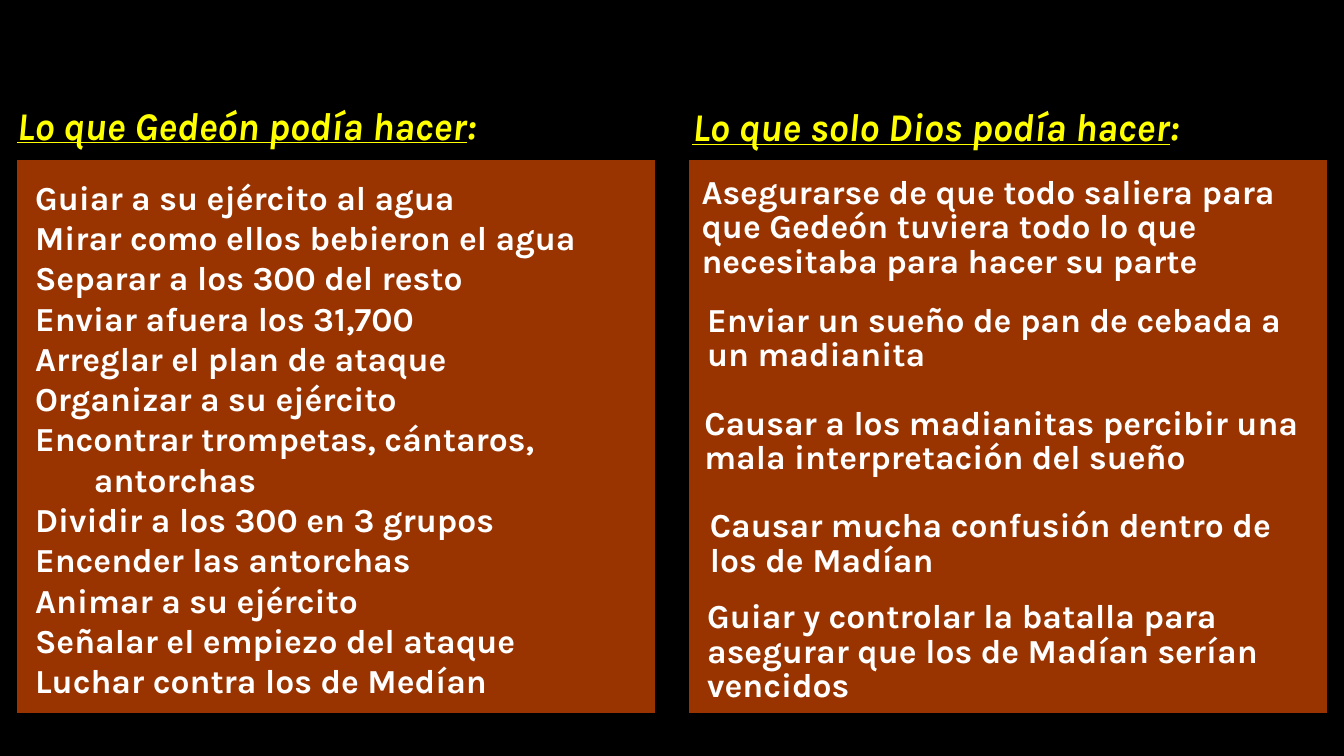
from pptx import Presentation
from pptx.dml.color import RGBColor
from pptx.enum.shapes import MSO_SHAPE
from pptx.enum.text import MSO_AUTO_SIZE, PP_ALIGN
from pptx.util import Pt

FONT = "Karla"
BLACK, WHITE, YELLOW, RUST = "000000", "FFFFFF", "FFFF00", "993300"
PANEL_TOP, PANEL_WIDTH, PANEL_HEIGHT = 114, 456, 396
PANEL_LEFTS = (12, 492)
HEADINGS = (
    (5, 68.5, 456, "Lo que Gedeón podía hacer"),
    (487.5, 69.5, 468, "Lo que solo Dios podía hacer"),
)
CONTINUATION = "antorchas"
GIDEON_TASKS = (
    "Guiar a su ejército al agua",
    "Mirar como ellos bebieron el agua",
    "Separar a los 300 del resto",
    "Enviar afuera los 31,700",
    "Arreglar el plan de ataque",
    "Organizar a su ejército",
    "Encontrar trompetas, cántaros,",
    CONTINUATION,
    "Dividir a los 300 en 3 grupos",
    "Encender las antorchas",
    "Animar a su ejército",
    "Señalar el empiezo del ataque",
    "Luchar contra los de Medían",
)
GOD_TASKS = (
    (494, 123, 444, 81.5,
     "Asegurarse de que todo saliera para que Gedeón tuviera todo lo que necesitaba para hacer su parte"),
    (498, 214.5, 438, 57, "Enviar un sueño de pan de cebada a un madianita"),
    (496, 288, 441, 57, "Causar a los madianitas percibir una mala interpretación del sueño"),
    (500, 361, 441, 57, "Causar mucha confusión dentro de los de Madían"),
    (498, 426, 433, 81.5,
     "Guiar y controlar la batalla para asegurar que los de Madían serían vencidos"),
)


def color(value):
    """Turn a hex string into a colour."""
    return RGBColor.from_string(value)


def add_panel(slide, left):
    """Add one rust-coloured panel."""
    shape = slide.shapes.add_shape(
        MSO_SHAPE.RECTANGLE, Pt(left), Pt(PANEL_TOP), Pt(PANEL_WIDTH), Pt(PANEL_HEIGHT))
    shape.shadow.inherit = False
    shape.fill.solid()
    shape.fill.fore_color.rgb = color(RUST)
    shape.line.color.rgb = color(BLACK)
    shape.line.width = Pt(0.75)


def add_text_frame(slide, left, top, width, height):
    """Add a wrapping text box and return its text frame."""
    box = slide.shapes.add_textbox(Pt(left), Pt(top), Pt(width), Pt(height))
    box.text_frame.word_wrap = True
    box.text_frame.auto_size = MSO_AUTO_SIZE.SHAPE_TO_FIT_TEXT
    return box.text_frame


def add_run(paragraph, text, size=24, fill=WHITE, italic=False, underline=False):
    """Add one bold run to a paragraph."""
    run = paragraph.add_run()
    run.text = text
    run.font.name = FONT
    run.font.size = Pt(size)
    run.font.bold = True
    run.font.italic = italic
    run.font.underline = underline
    run.font.color.rgb = color(fill)


def add_heading(slide, left, top, width, text):
    """Add an underlined column heading ending in a plain colon."""
    paragraph = add_text_frame(slide, left, top, width, 41).paragraphs[0]
    add_run(paragraph, text, 28, YELLOW, italic=True, underline=True)
    add_run(paragraph, ":", 28, YELLOW, italic=True)


def add_task_list(slide, tasks):
    """Add Gideon's tasks, one paragraph each."""
    frame = add_text_frame(slide, 18, 122.5, 474, 385)
    for index, task in enumerate(tasks):
        paragraph = frame.add_paragraph() if index else frame.paragraphs[0]
        paragraph.alignment = PP_ALIGN.LEFT
        if task == CONTINUATION:
            paragraph._p.get_or_add_pPr().set("marL", str(Pt(42)))
        add_run(paragraph, task)


def add_task(slide, left, top, width, height, text):
    """Add one tightly spaced task of God."""
    paragraph = add_text_frame(slide, left, top, width, height).paragraphs[0]
    paragraph.line_spacing = 0.85
    add_run(paragraph, text)


def main():
    """Build and save the slide."""
    presentation = Presentation()
    presentation.slide_width, presentation.slide_height = Pt(960), Pt(540)
    slide = presentation.slides.add_slide(presentation.slide_layouts[6])
    slide.background.fill.solid()
    slide.background.fill.fore_color.rgb = color(BLACK)
    for heading in HEADINGS:
        add_heading(slide, *heading)
    for left in PANEL_LEFTS:
        add_panel(slide, left)
    add_task_list(slide, GIDEON_TASKS)
    for task in GOD_TASKS:
        add_task(slide, *task)
    presentation.save("out.pptx")


if __name__ == "__main__":
    main()
